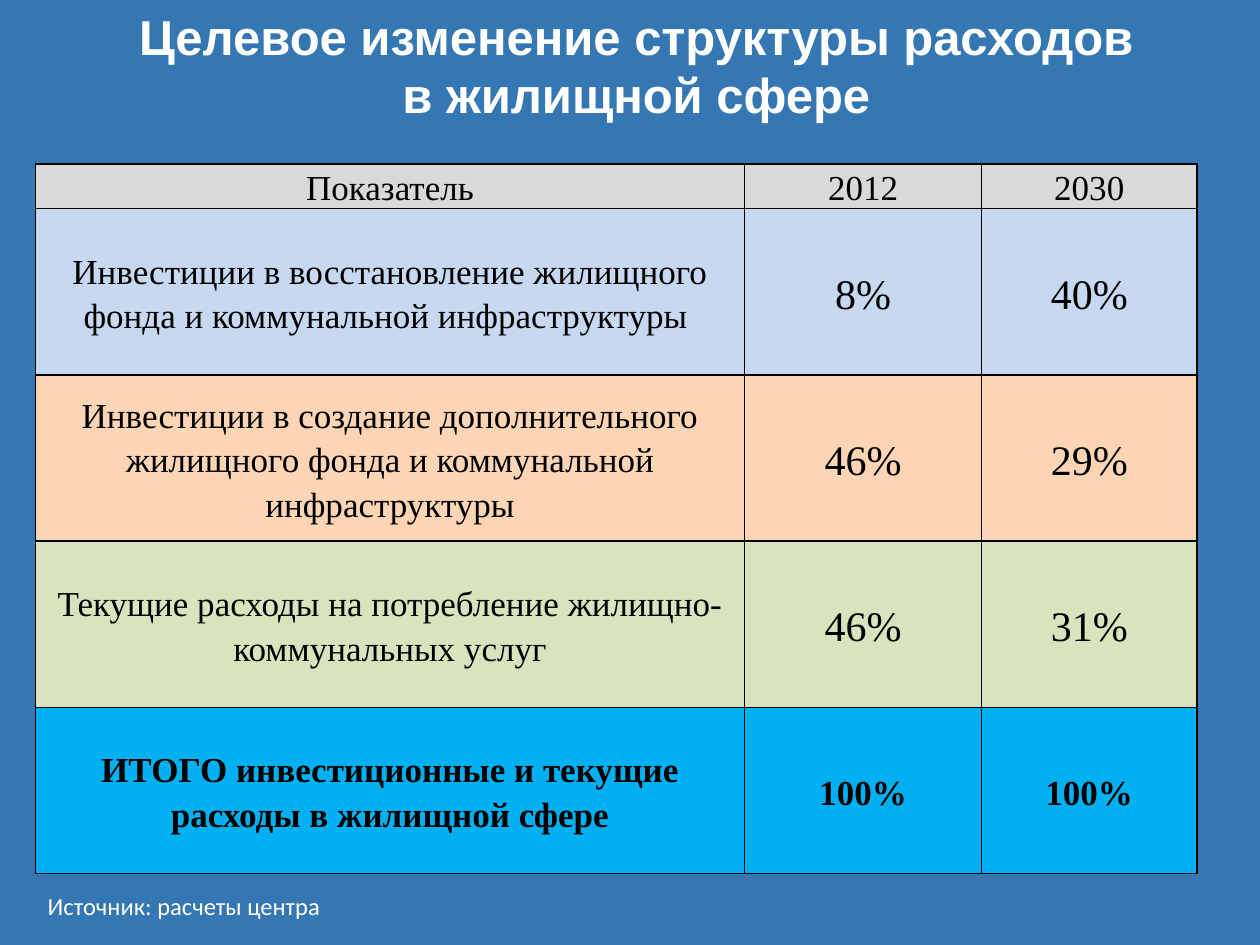
from lxml.etree import SubElement
from pptx import Presentation
from pptx.dml.color import RGBColor
from pptx.enum.text import MSO_ANCHOR, MSO_AUTO_SIZE, PP_ALIGN
from pptx.oxml.ns import qn
from pptx.util import Inches, Pt

BLUE = RGBColor(0x34, 0x77, 0xB2)
WHITE = RGBColor(0xFF, 0xFF, 0xFF)
BLACK = RGBColor(0x00, 0x00, 0x00)
GRAY = RGBColor(0xD9, 0xD9, 0xD9)
PALE_BLUE = RGBColor(0xC6, 0xD9, 0xF1)
PEACH = RGBColor(0xFC, 0xD5, 0xB5)
PALE_GREEN = RGBColor(0xD7, 0xE4, 0xBD)
CYAN = RGBColor(0x00, 0xB0, 0xF0)

COLUMN_WIDTHS = (5.63, 1.88, 1.71)
HEADER_HEIGHT = 0.3
BODY_HEIGHT = 1.32

ROWS = (
    (("Показатель", "2012", "2030"), GRAY, 20, False),
    (("Инвестиции в восстановление жилищного фонда и коммунальной инфраструктуры ",
      "8%", "40%"), PALE_BLUE, 24, False),
    (("Инвестиции в создание дополнительного жилищного фонда и коммунальной инфраструктуры",
      "46%", "29%"), PEACH, 24, False),
    (("Текущие расходы на потребление жилищно-коммунальных услуг",
      "46%", "31%"), PALE_GREEN, 24, False),
    (("ИТОГО инвестиционные и текущие расходы в жилищной сфере",
      "100%", "100%"), CYAN, 20, True),
)


class SlideBuilder:
    """Holds the style and the current slide."""

    title_font = "Arial"
    table_font = "Times New Roman"
    note_font = "Calibri"
    label_size = 20

    def __init__(self, deck):
        self.slide = deck.slides.add_slide(deck.slide_layouts[5])
        background = self.slide.background.fill
        background.solid()
        background.fore_color.rgb = BLUE

    def add_run(self, para, text, font, size, color, bold=False):
        span = para.add_run()
        span.text = text
        span.font.name = font
        span.font.size = Pt(size)
        span.font.color.rgb = color
        span.font.bold = bold

    def add_title(self, lines, left, top, width, height):
        title = self.slide.shapes.title
        title.left, title.top = Inches(left), Inches(top)
        title.width, title.height = Inches(width), Inches(height)
        title.text_frame.vertical_anchor = MSO_ANCHOR.MIDDLE
        para = title.text_frame.paragraphs[0]
        para.alignment = PP_ALIGN.CENTER
        for index, line in enumerate(lines):
            if index:
                para.add_line_break()
            self.add_run(para, line, self.title_font, 28, WHITE, True)

    def add_borders(self, cell):
        properties = cell._tc.get_or_add_tcPr()
        for index, side in enumerate(("lnL", "lnR", "lnT", "lnB")):
            line = SubElement(properties, qn(f"a:{side}"), w=str(Pt(1)))
            fill = SubElement(line, qn("a:solidFill"))
            SubElement(fill, qn("a:srgbClr"), val=str(BLACK))
            properties.insert(index, line)

    def fill_cell(self, cell, text, size, color, bold):
        cell.fill.solid()
        cell.fill.fore_color.rgb = color
        cell.margin_left = cell.margin_right = Inches(0.03)
        cell.margin_top = cell.margin_bottom = 0
        cell.vertical_anchor = MSO_ANCHOR.MIDDLE
        para = cell.text_frame.paragraphs[0]
        para.alignment = PP_ALIGN.CENTER
        para.line_spacing = 1.15
        self.add_run(para, text, self.table_font, size, BLACK, bold)
        self.add_borders(cell)

    def add_table(self, rows, left, top):
        heights = [HEADER_HEIGHT] + [BODY_HEIGHT] * (len(rows) - 1)
        table = self.slide.shapes.add_table(
            len(rows), len(COLUMN_WIDTHS), Inches(left), Inches(top),
            Inches(sum(COLUMN_WIDTHS)), Inches(sum(heights))).table
        for column, width in zip(table.columns, COLUMN_WIDTHS):
            column.width = Inches(width)
        for row, height, (texts, color, value_size, bold) in zip(table.rows, heights, rows):
            row.height = Inches(height)
            for index, (cell, text) in enumerate(zip(row.cells, texts)):
                size = value_size if index else self.label_size
                self.fill_cell(cell, text, size, color, bold)

    def add_note(self, text, left, top, width, height):
        box = self.slide.shapes.add_textbox(
            Inches(left), Inches(top), Inches(width), Inches(height))
        box.text_frame.word_wrap = True
        box.text_frame.auto_size = MSO_AUTO_SIZE.SHAPE_TO_FIT_TEXT
        self.add_run(box.text_frame.paragraphs[0], text, self.note_font, 14, WHITE)


def main():
    deck = Presentation()
    deck.slide_width, deck.slide_height = Inches(10), Inches(7.5)
    builder = SlideBuilder(deck)
    builder.add_title(("Целевое изменение структуры расходов", "в жилищной сфере"),
                      0.55, -0.11, 9, 1.25)
    builder.add_table(ROWS, 0.28, 1.3)
    builder.add_note("Источник: расчеты центра", 0.28, 7.02, 7.32, 0.34)
    deck.save("out.pptx")


if __name__ == "__main__":
    main()
